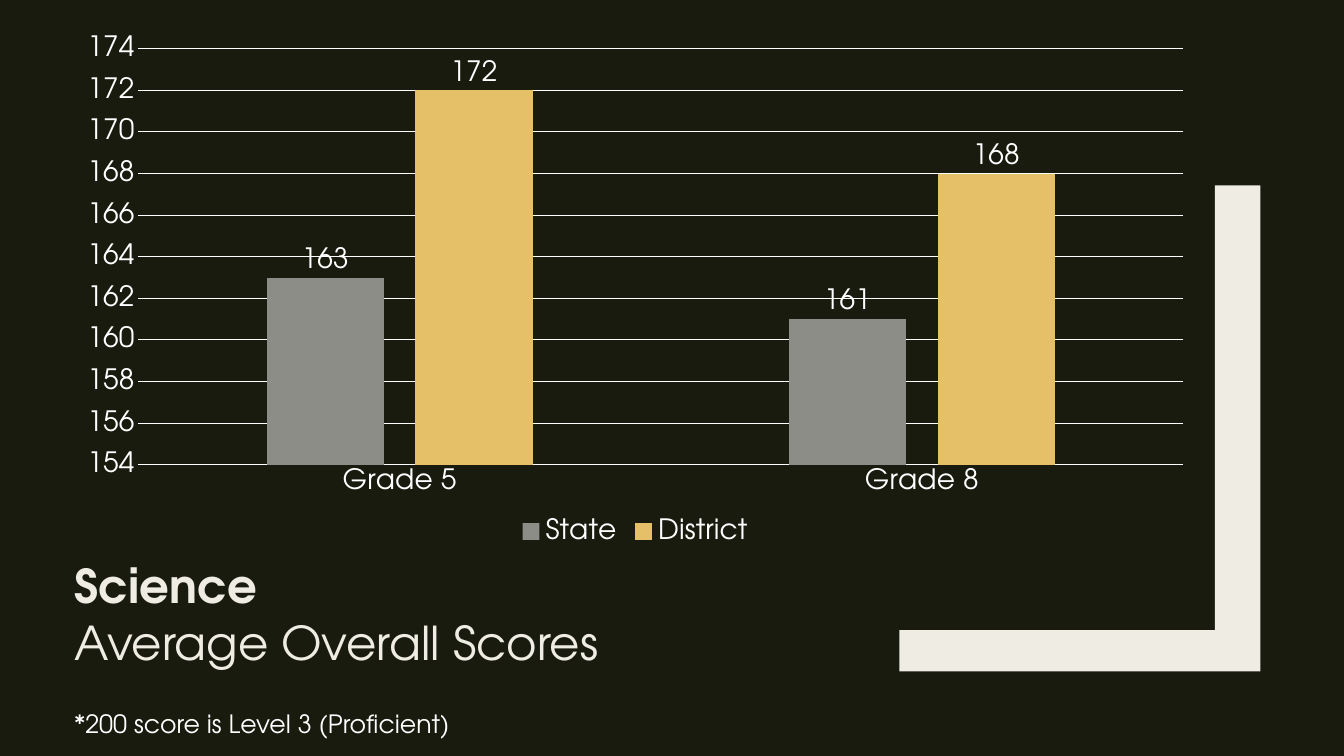
from dataclasses import dataclass

from pptx import Presentation
from pptx.chart.data import CategoryChartData
from pptx.dml.color import RGBColor
from pptx.enum.chart import XL_CHART_TYPE, XL_LABEL_POSITION, XL_LEGEND_POSITION, XL_TICK_MARK
from pptx.enum.text import MSO_ANCHOR, MSO_AUTO_SIZE
from pptx.util import Inches, Pt

FACE = "TeX Gyre Adventor"
WHITE = "FFFFFF"
CREAM = "EFEDE3"
DARK = "191B0E"


@dataclass
class Line:
    text: str
    bold: bool = False


@dataclass
class Note:
    box: tuple[float, float, float, float]
    lines: list[Line]
    size: float
    color: str
    space: float
    frame: dict


@dataclass
class Score:
    name: str
    marks: tuple[int, ...]
    color: str


GRADES = ("Grade 5", "Grade 8")
SCORES = [
    Score("State", (163, 161), "8C8D86"),
    Score("District", (172, 168), "E6C069"),
]
NOTES = [
    Note((0.64, 5.45, 10.51, 1.25),
         [Line("Science", True), Line("Average Overall Scores")],
         33.3, CREAM, 1.02,
         {"word_wrap": True, "vertical_anchor": MSO_ANCHOR.MIDDLE}),
    Note((0.64, 6.98, 4, 0.4),
         [Line("*200 score is Level 3 (Proficient)")],
         18, WHITE, 1.0,
         {"word_wrap": False, "auto_size": MSO_AUTO_SIZE.SHAPE_TO_FIT_TEXT}),
]
CORNER = [(12.05, 1.84), (12.5, 1.84), (12.5, 6.66),
          (8.92, 6.66), (8.92, 6.25), (12.05, 6.25)]


def apply(item, values: dict) -> None:
    for name, value in values.items():
        setattr(item, name, value)


def paint(fill, color: str) -> None:
    fill.solid()
    fill.fore_color.rgb = RGBColor.from_string(color)


def style(font, size: float, color: str, bold: bool = False) -> None:
    apply(font, {"name": FACE, "size": Pt(size), "bold": bold})
    paint(font.fill, color)


def rule(line) -> None:
    line.width = Pt(0.75)
    paint(line.fill, WHITE)


def draw_corner(slide) -> None:
    first, *rest = [(Inches(x), Inches(y)) for x, y in CORNER]
    path = slide.shapes.build_freeform(*first)
    path.add_line_segments(rest, close=True)
    shape = path.convert_to_shape()
    shape.shadow.inherit = False
    paint(shape.fill, CREAM)
    shape.line.fill.background()


def draw_note(slide, note: Note) -> None:
    box = slide.shapes.add_textbox(*map(Inches, note.box))
    frame = box.text_frame
    apply(frame, note.frame)
    for index, line in enumerate(note.lines):
        para = frame.add_paragraph() if index else frame.paragraphs[0]
        para.line_spacing = note.space
        run = para.add_run()
        run.text = line.text
        style(run.font, note.size, note.color, line.bold)


def draw_chart(slide) -> None:
    data = CategoryChartData()
    data.categories = GRADES
    for score in SCORES:
        data.add_series(score.name, score.marks)
    area = map(Inches, (0.64, 0.25, 11.32, 5.21))
    chart = slide.shapes.add_chart(XL_CHART_TYPE.COLUMN_CLUSTERED, *area, data).chart
    apply(chart, {"has_title": False, "has_legend": True})
    style(chart.font, 20, WHITE)
    apply(chart.legend, {"position": XL_LEGEND_POSITION.BOTTOM, "include_in_layout": False})
    style(chart.legend.font, 20, WHITE)

    ticks = {"major_tick_mark": XL_TICK_MARK.NONE, "minor_tick_mark": XL_TICK_MARK.NONE}
    base, scale = chart.category_axis, chart.value_axis
    for axis in (base, scale):
        apply(axis, ticks)
        style(axis.tick_labels.font, 20, WHITE)
    apply(scale, {"minimum_scale": 154, "maximum_scale": 174,
                  "major_unit": 2, "has_major_gridlines": True})
    rule(base.format.line)
    rule(scale.major_gridlines.format.line)
    scale.format.line.fill.background()

    plot = chart.plots[0]
    apply(plot, {"gap_width": 219, "overlap": -27, "vary_by_categories": False})
    for bars, score in zip(plot.series, SCORES):
        paint(bars.format.fill, score.color)
        labels = bars.data_labels
        apply(labels, {"show_value": True, "position": XL_LABEL_POSITION.OUTSIDE_END})
        style(labels.font, 20, WHITE)


def main() -> None:
    deck = Presentation()
    apply(deck, {"slide_width": Inches(13.33), "slide_height": Inches(7.5)})
    slide = deck.slides.add_slide(deck.slide_layouts[6])
    paint(slide.background.fill, DARK)
    draw_corner(slide)
    draw_chart(slide)
    for note in NOTES:
        draw_note(slide, note)
    deck.save("out.pptx")


if __name__ == "__main__":
    main()
